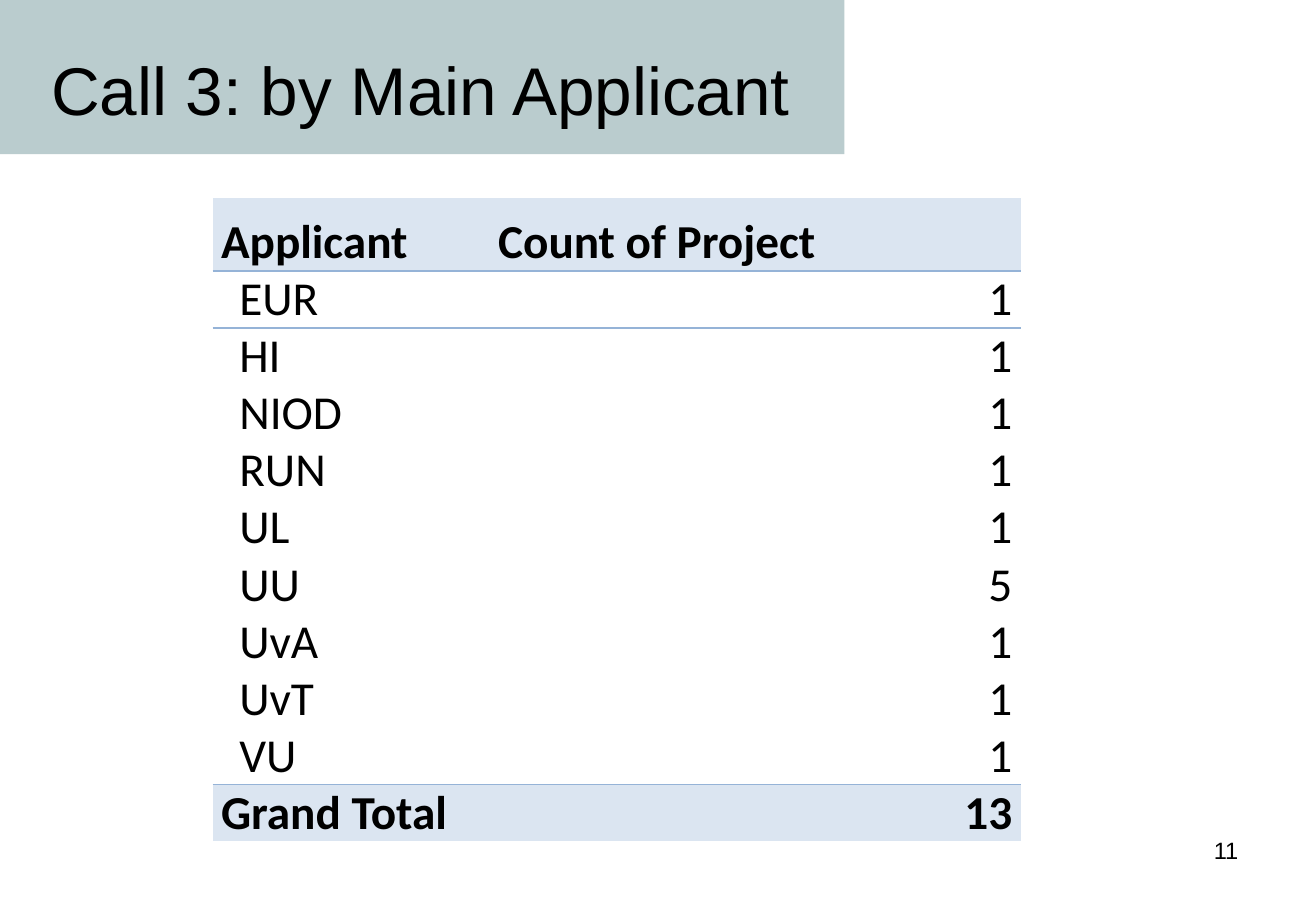
"""Build the slide that counts Call 3 projects by main applicant."""
from lxml import etree
from pptx import Presentation
from pptx.dml.color import RGBColor
from pptx.enum.shapes import MSO_SHAPE
from pptx.enum.text import MSO_ANCHOR as ANCHOR, PP_ALIGN as ALIGN
from pptx.oxml import parse_xml
from pptx.oxml.ns import nsdecls, qn
from pptx.util import Inches, Pt


def rgb(code):
    return RGBColor.from_string(code)


def write(tf, text, size=28, font="Calibri", bold=False, align=ALIGN.LEFT, indent=0):
    p = tf.paragraphs[0]
    p.alignment = align
    p._p.get_or_add_pPr().set("indent", str(Inches(indent)))
    r = p.add_run()
    r.text = text
    r.font.name, r.font.size, r.font.bold = font, Pt(size), bold
    r.font.color.rgb = rgb("000000")


prs = Presentation()
prs.slide_width, prs.slide_height = Inches(10.83), Inches(7.5)
s = prs.slides.add_slide(prs.slide_layouts[5])

band = s.shapes.add_shape(MSO_SHAPE.RECTANGLE, 0, 0, Inches(6.95), Inches(1.27))
band.shadow.inherit = False
band.fill.solid()
band.fill.fore_color.rgb = rgb("BACCCE")
band.line.fill.background()

number = s.shapes.add_textbox(Inches(7.76), Inches(6.83), Inches(2.53), Inches(0.52))
number.text_frame.word_wrap = True
write(number.text_frame, "11", size=14, font="Arial", align=ALIGN.RIGHT)

title = s.shapes.title
title.left, title.top, title.width, title.height = map(Inches, (0.32, 0.28, 6.91, 0.9))
title.text_frame.vertical_anchor = ANCHOR.MIDDLE
write(title.text_frame, "Call 3: by Main Applicant", size=40, font="Arial")
band._element.addprevious(title._element)
title._element.addprevious(band._element)

rows = [
    ("Applicant", "Count of Project"),
    ("EUR", "1"), ("HI", "1"), ("NIOD", "1"), ("RUN", "1"), ("UL", "1"),
    ("UU", "5"), ("UvA", "1"), ("UvT", "1"), ("VU", "1"),
    ("Grand Total", "13"),
]
last = len(rows) - 1
borders = {0: "lnB", 1: "lnT", last - 1: "lnB", last: "lnT"}

frame = s.shapes.add_table(len(rows), 2, Inches(1.75), Inches(1.63), Inches(6.65), Inches(5.3))
table = frame.table
table.first_row = table.horz_banding = False
table._tbl.tblPr.find(qn("a:tableStyleId")).text = "{2D5ABB26-0587-4C30-8999-92F81FD0307C}"
for column, width in zip(table.columns, (2.28, 4.37)):
    column.width = Inches(width)

for i, row in enumerate(rows):
    table.rows[i].height = Inches(0.47 if i else 0.6)
    strong = i in (0, last)
    for j, text in enumerate(row):
        cell = table.cell(i, j)
        cell.vertical_anchor = ANCHOR.BOTTOM
        cell.margin_left = cell.margin_right = Inches(0.07)
        cell.margin_top = cell.margin_bottom = 0
        if i in borders:
            ln = parse_xml(f'<a:{borders[i]} {nsdecls("a")} w="{Pt(1)}"/>')
            fill = etree.SubElement(ln, qn("a:solidFill"))
            etree.SubElement(fill, qn("a:srgbClr"), val="95B3D7")
            cell._tc.get_or_add_tcPr().append(ln)
        if strong:
            cell.fill.solid()
            cell.fill.fore_color.rgb = rgb("DBE5F1")
        else:
            cell.fill.background()
        write(cell.text_frame, text, bold=strong,
              align=ALIGN.RIGHT if i and j else ALIGN.LEFT,
              indent=0 if strong or j else 0.15)

prs.save("out.pptx")
